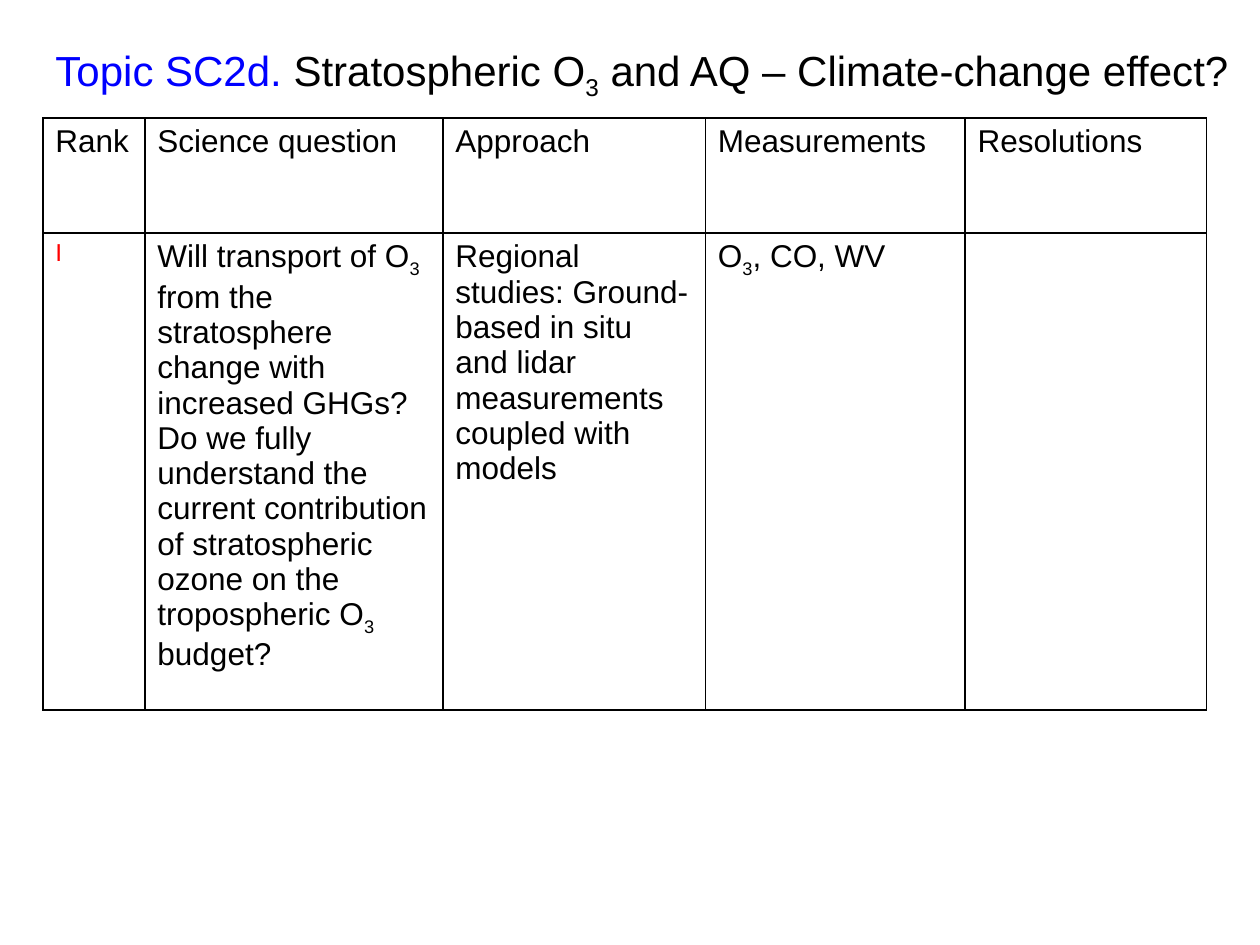
from lxml import etree
from pptx import Presentation
from pptx.dml.color import RGBColor
from pptx.enum.text import MSO_ANCHOR, MSO_AUTO_SIZE, PP_ALIGN
from pptx.oxml.ns import qn
from pptx.util import Pt

FONT = "Arial"
BLACK, BLUE, RED, WHITE = "000000", "0000FF", "FF0000", "FFFFFF"
TITLE_SIZE, TABLE_SIZE, RANK_SIZE = 24, 18, 14
TITLE_ONLY = 5
LEFT = 24.5

# Each text is a list of spans; a span is a string or a (string, format) pair.
SUB_3 = ("3", {"subscript": True})
TITLE = [
    ("Topic SC2d.", {"color": BLUE}),
    " Stratospheric O", SUB_3, " and AQ – Climate-change effect?",
]
HEADER = [["Rank"], ["Science question"], ["Approach"], ["Measurements"], ["Resolutions"]]
QUESTION = [
    [("I", {"color": RED, "size": RANK_SIZE})],
    [
        "Will transport of O", SUB_3,
        " from the stratosphere change with increased GHGs?  Do we fully understand "
        "the current contribution of stratospheric ozone on the tropospheric O", SUB_3,
        " budget?",
    ],
    ["Regional studies: Ground-based in situ and lidar measurements coupled with models"],
    ["O", SUB_3, ", CO, WV"],
    [],
]
ROWS = [HEADER, QUESTION]
COLUMN_WIDTHS = [58.3, 170.3, 150, 148.5, 137.9]
ROW_HEIGHTS = [65.7, 272.5]


def rgb(value):
    return RGBColor.from_string(value)


def add_span(paragraph, text, size, color=BLACK, subscript=False):
    span = paragraph.add_run()
    span.text = text
    span.font.name = FONT
    span.font.size = Pt(size)
    span.font.color.rgb = rgb(color)
    if subscript:
        span._r.get_or_add_rPr().set("baseline", "-25000")


def write(paragraph, spans, size):
    for item in spans:
        text, style = (item, {}) if isinstance(item, str) else item
        add_span(paragraph, text, **{"size": size, **style})


def set_borders(cell):
    """Draw a thin black line on all four sides, ahead of the cell fill."""
    properties = cell._tc.get_or_add_tcPr()
    for position, side in enumerate(("lnL", "lnR", "lnT", "lnB")):
        line = etree.Element(qn(f"a:{side}"), w=str(Pt(1)))
        fill = etree.SubElement(line, qn("a:solidFill"))
        etree.SubElement(fill, qn("a:srgbClr"), val=BLACK)
        properties.insert(position, line)


def add_title(page):
    box = page.shapes.title
    box.left, box.top, box.width, box.height = Pt(LEFT), Pt(21.6), Pt(697), Pt(36)
    frame = box.text_frame
    frame.word_wrap = False
    frame.auto_size = MSO_AUTO_SIZE.SHAPE_TO_FIT_TEXT
    frame.vertical_anchor = MSO_ANCHOR.TOP
    paragraph = frame.paragraphs[0]
    paragraph.alignment = PP_ALIGN.LEFT
    write(paragraph, TITLE, TITLE_SIZE)


def add_question_table(page):
    table = page.shapes.add_table(
        len(ROWS), len(COLUMN_WIDTHS), Pt(LEFT), Pt(67.5),
        Pt(sum(COLUMN_WIDTHS)), Pt(sum(ROW_HEIGHTS)),
    ).table
    table.first_row = table.horz_banding = False
    for column, width in zip(table.columns, COLUMN_WIDTHS):
        column.width = Pt(width)
    for row, height, texts in zip(table.rows, ROW_HEIGHTS, ROWS):
        row.height = Pt(height)
        for cell, spans in zip(row.cells, texts):
            cell.fill.solid()
            cell.fill.fore_color.rgb = rgb(WHITE)
            set_borders(cell)
            write(cell.text_frame.paragraphs[0], spans, TABLE_SIZE)


def main():
    deck = Presentation()
    deck.slide_width, deck.slide_height = Pt(720), Pt(540)
    page = deck.slides.add_slide(deck.slide_layouts[TITLE_ONLY])
    add_question_table(page)
    add_title(page)
    deck.save("out.pptx")


if __name__ == "__main__":
    main()
